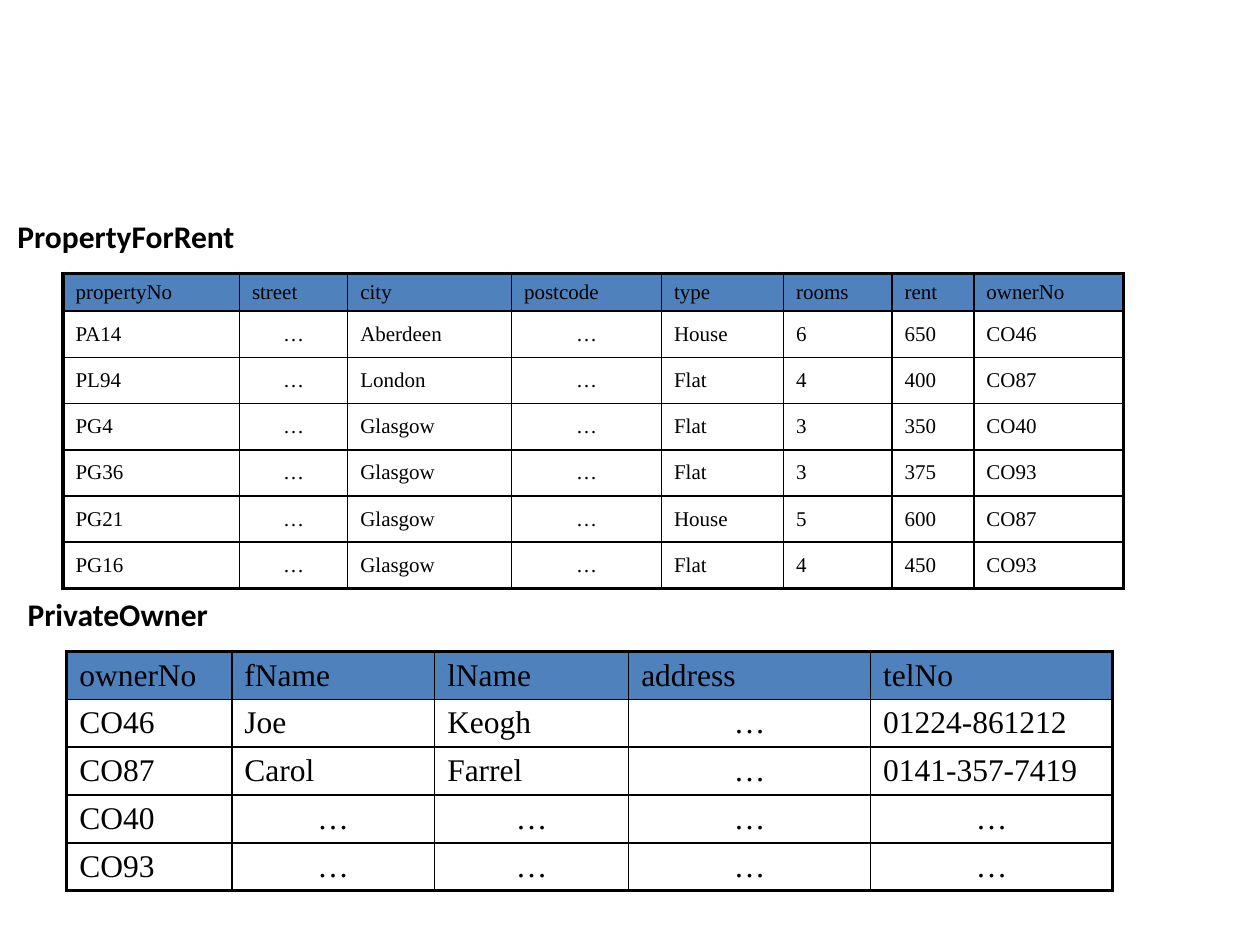
import pptx
import pptx.dml.color
import pptx.enum.text
import pptx.oxml.ns
import pptx.util
from lxml import etree

BLACK = pptx.dml.color.RGBColor(0x00, 0x00, 0x00)
HEADER_BLUE = pptx.dml.color.RGBColor(0x4F, 0x81, 0xBD)
INNER, OUTER = 1, 2.25  # border widths in points
UNIT = 0.1  # the slide is a grid of 100 columns by 75 rows
MISSING = "…"

PROPERTIES = [
    ("propertyNo", "street", "city", "postcode", "type", "rooms", "rent", "ownerNo"),
    ("PA14", MISSING, "Aberdeen", MISSING, "House", "6", "650", "CO46"),
    ("PL94", MISSING, "London", MISSING, "Flat", "4", "400", "CO87"),
    ("PG4", MISSING, "Glasgow", MISSING, "Flat", "3", "350", "CO40"),
    ("PG36", MISSING, "Glasgow", MISSING, "Flat", "3", "375", "CO93"),
    ("PG21", MISSING, "Glasgow", MISSING, "House", "5", "600", "CO87"),
    ("PG16", MISSING, "Glasgow", MISSING, "Flat", "4", "450", "CO93"),
]
OWNERS = [
    ("ownerNo", "fName", "lName", "address", "telNo"),
    ("CO46", "Joe", "Keogh", MISSING, "01224-861212"),
    ("CO87", "Carol", "Farrel", MISSING, "0141-357-7419"),
    ("CO40",) + (MISSING,) * 4,
    ("CO93",) + (MISSING,) * 4,
]


def grid(units):
    return pptx.util.Inches(units * UNIT)


def write(frame, text, *, font, size, bold=False, centred=False):
    paragraph = frame.paragraphs[0]
    align = pptx.enum.text.PP_ALIGN
    paragraph.alignment = align.CENTER if centred else align.LEFT
    run = paragraph.add_run()
    run.text = text
    run.font.name = font
    run.font.size = pptx.util.Pt(size)
    run.font.bold = bold
    run.font.color.rgb = BLACK


def set_borders(cell, widths):
    """Draw the left, right, top and bottom borders, which precede the fill."""
    properties = cell._tc.get_or_add_tcPr()
    for place, (side, width) in enumerate(zip("LRTB", widths)):
        line = etree.Element(pptx.oxml.ns.qn(f"a:ln{side}"), w=str(pptx.util.Pt(width)))
        fill = etree.SubElement(line, pptx.oxml.ns.qn("a:solidFill"))
        etree.SubElement(fill, pptx.oxml.ns.qn("a:srgbClr"), val=str(BLACK))
        properties.insert(place, line)


def add_caption(slide, box, text):
    caption = slide.shapes.add_textbox(*map(grid, box)).text_frame
    caption.word_wrap = True
    write(caption, text, font="Calibri", size=18, bold=True)


def add_relation(slide, box, rows, column_shares, header_height, size):
    left, top, width, height = box
    table = slide.shapes.add_table(len(rows), len(rows[0]), *map(grid, box)).table
    table.first_row = table.horz_banding = False

    # Columns share the width; body rows share what the header leaves
    for column, share in zip(table.columns, column_shares):
        column.width = grid(width * share / sum(column_shares))
    body_height = (height - header_height) / (len(rows) - 1)
    for r, row in enumerate(table.rows):
        row.height = grid(body_height if r else header_height)

    last_row, last_column = len(rows) - 1, len(rows[0]) - 1
    for r, values in enumerate(rows):
        for c, value in enumerate(values):
            cell = table.cell(r, c)
            cell.vertical_anchor = pptx.enum.text.MSO_ANCHOR.MIDDLE
            if r == 0:
                cell.fill.solid()
                cell.fill.fore_color.rgb = HEADER_BLUE
            else:
                cell.fill.background()
            write(cell.text_frame, value, font="Times New Roman", size=size,
                  centred=value == MISSING)
            at_edge = (c == 0, c == last_column, r == 0, r == last_row)
            set_borders(cell, [OUTER if edge else INNER for edge in at_edge])


def main():
    presentation = pptx.Presentation()
    presentation.slide_width, presentation.slide_height = grid(100), grid(75)
    slide = presentation.slides.add_slide(presentation.slide_layouts[6])

    # Owners
    add_relation(slide, (5.3, 51.7, 83, 19), OWNERS,
                 (13.1, 16.1, 15.4, 19.2, 19.2), header_height=3.8, size=18)
    # Properties
    add_relation(slide, (5, 21.7, 84.2, 25), PROPERTIES,
                 (14, 8.6, 13, 11.9, 9.7, 8.6, 6.5, 11.9), header_height=3, size=12)
    # Relation names
    add_caption(slide, (1.2, 46.7, 26.8, 5), "PrivateOwner")
    add_caption(slide, (0.4, 16.7, 26.8, 4), "PropertyForRent")

    presentation.save("out.pptx")


if __name__ == "__main__":
    main()
